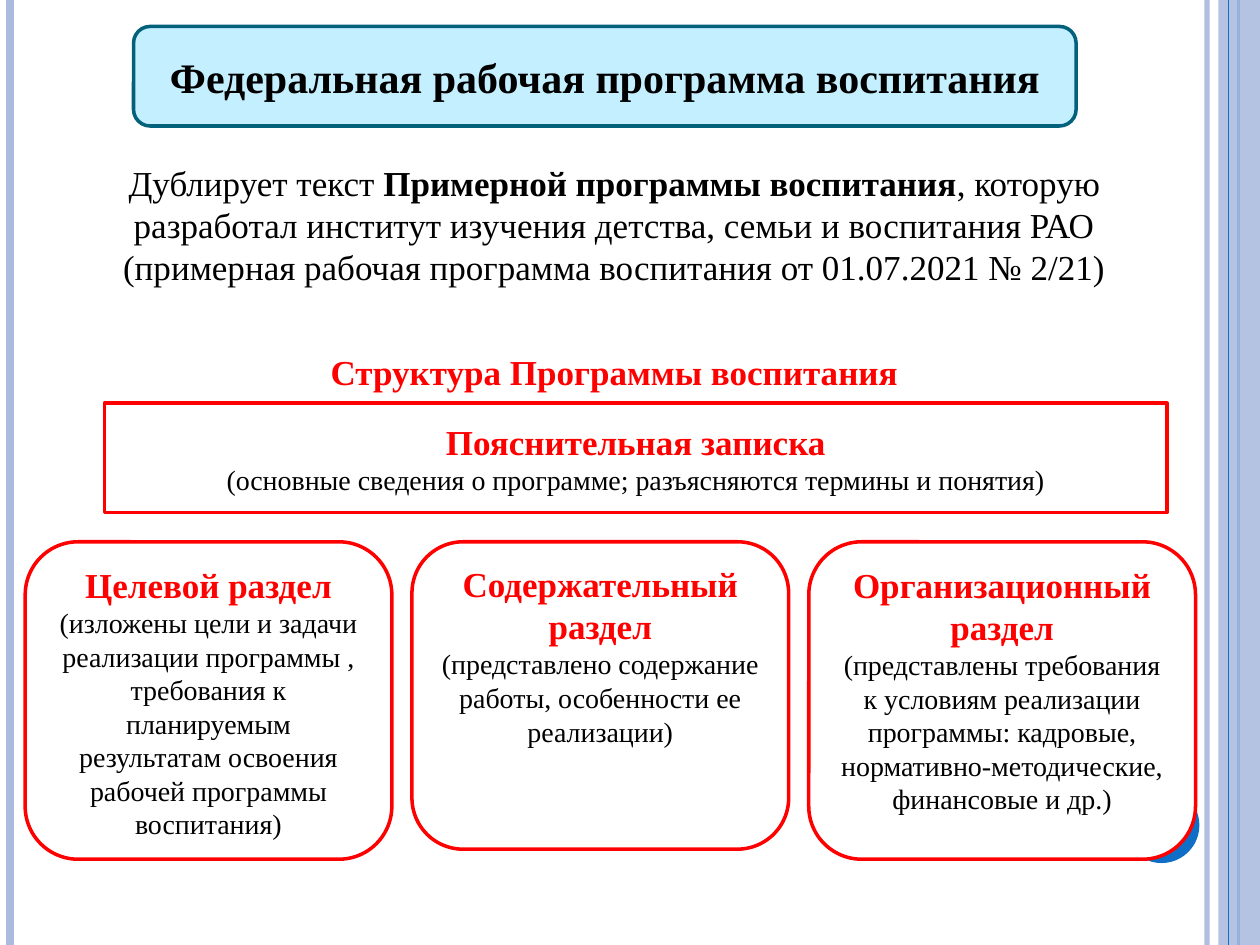
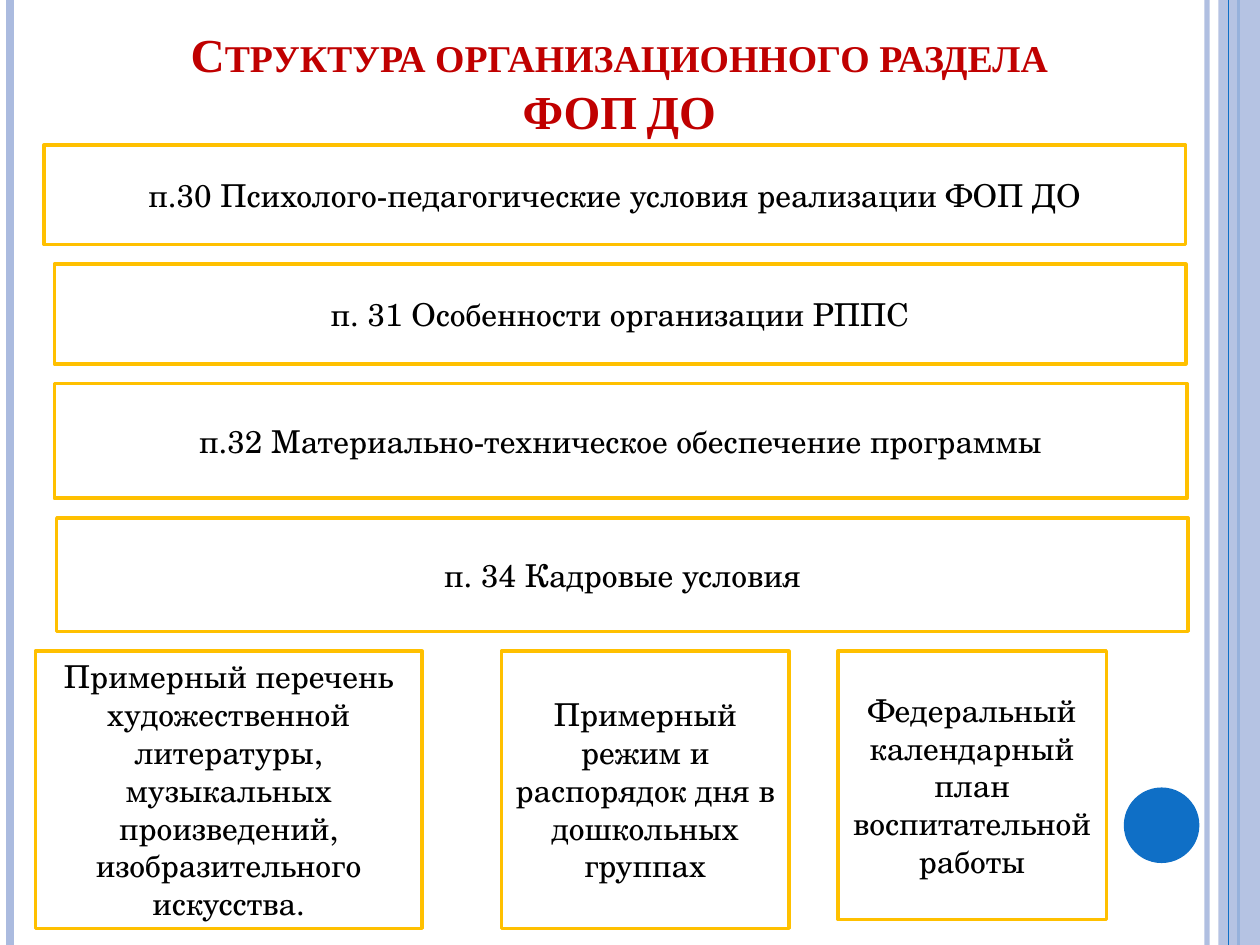
from dataclasses import dataclass

from lxml.etree import SubElement
from pptx import Presentation
from pptx.dml.color import RGBColor
from pptx.enum.shapes import MSO_CONNECTOR, MSO_SHAPE
from pptx.enum.text import MSO_ANCHOR, PP_ALIGN
from pptx.oxml.ns import qn
from pptx.util import Pt


@dataclass(frozen=True)
class Theme:
    black: str = "000000"
    white: str = "FFFFFF"
    red: str = "FF0000"
    dark_red: str = "C00000"
    gold: str = "FFC000"
    sky: str = "C4EFFF"
    teal: str = "04617B"
    blue: str = "0F6FC6"
    lavender: str = "ABBBDF"
    serif: str = "Times New Roman"
    schola: str = "TeX Gyre Schola"
    title: int = 27
    banner: int = 24
    heading: int = 20
    item: int = 18
    detail: int = 16
    outline: int = 2


T = Theme()
WIDTH, HEIGHT = 720, 540

# Frame lines: x, colour, line width, opacity in percent
LINES_BELOW_BAND = [
    (689.8, T.lavender, 3, 93),
    (5.8, T.lavender, 4.5, 100),
    (707.8, T.blue, 1.5, 100),
]
LINES_ABOVE_BAND = [(702, T.blue, 0.75, 100)]
BAND_LEFT, BAND_OPACITY = 696.2, 87
DOT = (642.2, 450, 43.2, 43.2)

BANNER = "Федеральная рабочая программа воспитания"
INTRO = [
    ("Дублирует текст ", False),
    ("Примерной программы воспитания", True),
    (", которую разработал институт изучения детства, семьи и воспитания РАО "
     "(примерная рабочая программа воспитания от 01.07.2021 № 2/21)", False),
]
STRUCTURE = "Структура Программы воспитания"
NOTE = ("Пояснительная записка",
        "(основные сведения о программе; разъясняются термины и понятия)")
# Width, height, heading, detail
SECTIONS = [
    (209.5, 181.4, "Целевой раздел",
     "(изложены цели и задачи реализации программы , требования к планируемым "
     "результатам освоения рабочей программы воспитания)"),
    (215.3, 175.7, "Содержательный раздел",
     "(представлено содержание работы, особенности ее реализации)"),
    (221, 181.4, "Организационный раздел",
     "(представлены требования к условиям реализации программы: кадровые, "
     "нормативно-методические, финансовые и др.)"),
]
SECTION_LEFT, SECTION_TOP, SECTION_GAP = 14.4, 309.6, 11.5

TITLE = "Структура организационного раздела\vФОП ДО"
# Left, width, height, text
CLAUSES = [
    (25.2, 652.3, 56.9, "п.30 Психолого-педагогические условия реализации ФОП ДО"),
    (31, 646.6, 56.9, "п. 31 Особенности организации РППС"),
    (31, 647.3, 65.5, "п.32 Материально-техническое обеспечение программы"),
    (32.4, 646.6, 64.8, "п. 34 Кадровые условия"),
]
APPENDICES = [
    (20.2, 221, 158.4,
     "Примерный перечень художественной литературы, музыкальных произведений, "
     "изобразительного искусства."),
    (286.6, 164.2, 158.4, "Примерный режим и распорядок дня в дошкольных группах"),
    (478.8, 153.4, 153.4, "Федеральный календарный план воспитательной работы"),
]
CLAUSE_TOP, CLAUSE_GAP = 82.8, 11.3


def rgb(color):
    return RGBColor.from_string(color)


def set_opacity(s, percent):
    clr = next(s._element.spPr.iter(qn("a:srgbClr")))
    SubElement(clr, qn("a:alpha")).set("val", str(percent * 1000))


def add_vertical(slide, x, color, width, opacity):
    c = slide.shapes.add_connector(MSO_CONNECTOR.STRAIGHT, Pt(x), 0, Pt(x), Pt(HEIGHT))
    c.line.color.rgb = rgb(color)
    c.line.width = Pt(width)
    if opacity < 100:
        set_opacity(c, opacity)
    SubElement(c._element.spPr, qn("a:effectLst"))


def add_box(slide, kind, box, fill, outline=None):
    s = slide.shapes.add_shape(kind, *map(Pt, box))
    s.shadow.inherit = False
    s.fill.solid()
    s.fill.fore_color.rgb = rgb(fill)
    if outline:
        s.line.color.rgb = rgb(outline)
        s.line.width = Pt(T.outline)
    else:
        s.line.fill.background()
    return s


def add_text_box(slide, box):
    return slide.shapes.add_textbox(*map(Pt, box))


def write(s, paragraphs, anchor=MSO_ANCHOR.MIDDLE):
    """Fill a shape with centred paragraphs of (text, size, colour, bold, font)."""
    tf = s.text_frame
    tf.word_wrap = True
    tf.vertical_anchor = anchor
    tf.text = "\n".join(text for text, *_ in paragraphs)
    for p, (_, size, color, bold, font) in zip(tf.paragraphs, paragraphs):
        p.alignment = PP_ALIGN.CENTER
        for r in p.runs:
            style(r, size, color, bold, font)
    return tf


def style(r, size, color, bold, font):
    r.font.size = Pt(size)
    r.font.color.rgb = rgb(color)
    r.font.bold = bold
    r.font.name = font


def add_described(slide, kind, box, heading, detail, anchor):
    """Red-outlined box with a red heading above a black explanation."""
    s = add_box(slide, kind, box, T.white, T.red)
    write(s, [(heading, T.heading, T.red, True, T.serif),
              (detail, T.detail, T.black, False, T.serif)], anchor)


def add_item(slide, box, text):
    s = add_box(slide, MSO_SHAPE.RECTANGLE, box, T.white, T.gold)
    write(s, [(text, T.item, T.black, False, T.schola)])


def add_framed_slide(prs):
    slide = prs.slides.add_slide(prs.slide_layouts[6])
    for line in LINES_BELOW_BAND:
        add_vertical(slide, *line)
    band = add_box(slide, MSO_SHAPE.RECTANGLE,
                   (BAND_LEFT, 0, WIDTH - BAND_LEFT, HEIGHT), T.lavender)
    set_opacity(band, BAND_OPACITY)
    for line in LINES_ABOVE_BAND:
        add_vertical(slide, *line)
    add_box(slide, MSO_SHAPE.OVAL, DOT, T.blue)
    return slide


def build_programme(prs):
    slide = add_framed_slide(prs)
    intro = add_text_box(slide, (36, 88.6, 630, 421.2))
    tf = write(intro, [("", T.heading, T.black, False, T.serif),
                       (STRUCTURE, T.heading, T.red, True, T.serif)], MSO_ANCHOR.TOP)
    p, structure = tf.paragraphs
    for text, bold in INTRO:
        r = p.add_run()
        r.text = text
        style(r, T.heading, T.black, bold, T.serif)
    structure.space_before = Pt(36)

    banner = add_box(slide, MSO_SHAPE.ROUNDED_RECTANGLE,
                     (76.3, 15.1, 538.6, 56.9), T.sky, T.teal)
    write(banner, [(BANNER, T.banner, T.black, True, T.serif)])
    add_described(slide, MSO_SHAPE.RECTANGLE, (59.8, 230.4, 607, 62.6), *NOTE,
                  MSO_ANCHOR.MIDDLE)
    left = SECTION_LEFT
    for width, height, heading, detail in SECTIONS:
        add_described(slide, MSO_SHAPE.ROUNDED_RECTANGLE,
                      (left, SECTION_TOP, width, height), heading, detail, MSO_ANCHOR.TOP)
        left += width + SECTION_GAP


def build_organisation(prs):
    slide = add_framed_slide(prs)
    title = add_text_box(slide, (25.2, 9.4, 657.4, 73.4))
    tf = write(title, [(TITLE, T.title, T.dark_red, True, T.serif)], MSO_ANCHOR.BOTTOM)
    for r in tf.paragraphs[0].runs:
        r.font._element.set("cap", "small")

    top = CLAUSE_TOP
    for left, width, height, text in CLAUSES:
        add_item(slide, (left, top, width, height), text)
        top += height + CLAUSE_GAP
    for left, width, height, text in APPENDICES:
        add_item(slide, (left, top, width, height), text)


def main():
    prs = Presentation()
    prs.slide_width, prs.slide_height = Pt(WIDTH), Pt(HEIGHT)
    build_programme(prs)
    build_organisation(prs)
    prs.save("out.pptx")


if __name__ == "__main__":
    main()
